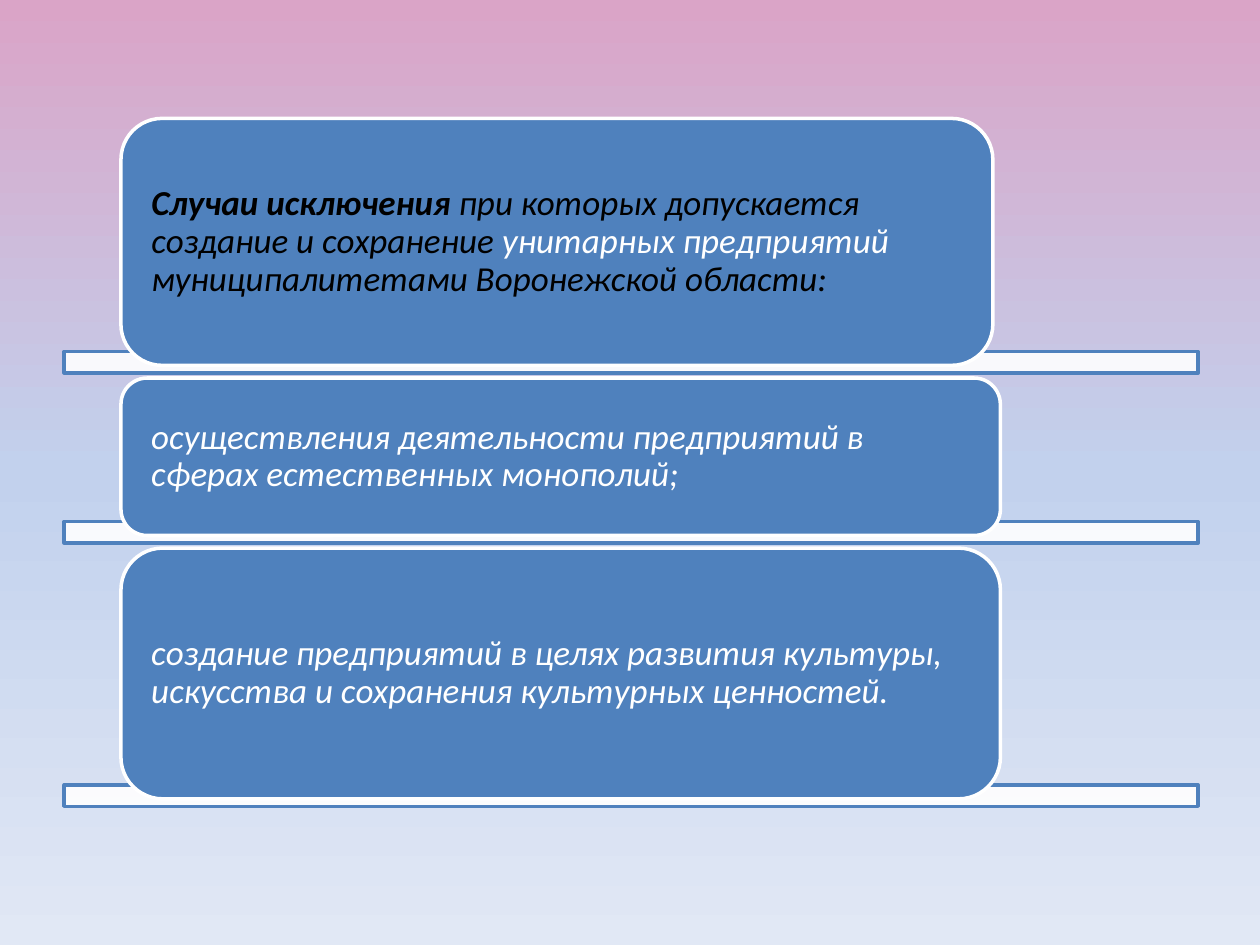
from copy import deepcopy

from lxml.etree import SubElement
from pptx import Presentation
from pptx.dml.color import RGBColor
from pptx.enum.shapes import MSO_SHAPE
from pptx.enum.text import MSO_ANCHOR, PP_ALIGN
from pptx.oxml.ns import qn
from pptx.util import Inches, Pt

THEME = {
    "font": "Calibri", "size": Pt(20), "line": Pt(2),
    "blue": "4F81BD", "white": "FFFFFF", "black": "000000",
    "background": [(0, "DAA4C7"), (0.5, "C2D1ED"), (1, "E1E8F5")],
}

deck = Presentation()
deck.slide_width, deck.slide_height = Inches(10), Inches(7.5)
page = deck.slides.add_slide(deck.slide_layouts[6])

# Grid: 100 columns by 75 rows
COLUMN = deck.slide_width / 100
ROW = deck.slide_height / 75
CORNER = 0.1667  # corner radius as a share of box height
CORNER_INSET = 0.29 * CORNER  # text inset that the rounded corner adds


def add_panel(kind, left, top, width, height, fill, line):
    panel = page.shapes.add_shape(kind, int(left * COLUMN), int(top * ROW),
                                  int(width * COLUMN), int(height * ROW))
    panel.shadow.inherit = False
    panel.fill.solid()
    panel.fill.fore_color.rgb = RGBColor.from_string(THEME[fill])
    panel.line.color.rgb = RGBColor.from_string(THEME[line])
    panel.line.width = THEME["line"]
    return panel


# Background: vertical gradient with three stops
backdrop = page.background.fill
backdrop.gradient()
backdrop.gradient_angle = 270
stop_list = page.element.find(".//" + qn("a:gsLst"))
stop_list.insert(1, deepcopy(stop_list[0]))
for stop, (position, color) in zip(backdrop.gradient_stops, THEME["background"]):
    stop.position = position
    stop.color.rgb = RGBColor.from_string(color)

# Boxes: width, height, and spans of (text, color, bold)
BOXES = [
    (69.2, 19.6, [
        ("Случаи исключения ", "black", True),
        ("при которых допускается создание и сохранение ", "black", False),
        ("унитарных предприятий ", "white", False),
        ("муниципалитетами Воронежской области:", "black", False),
    ]),
    (69.8, 12.5, [("осуществления деятельности предприятий в сферах "
                   "естественных монополий;", "white", False)]),
    (69.8, 19.9, [("создание предприятий в целях развития культуры, искусства "
                   "и сохранения культурных ценностей.", "white", False)]),
]
GAP = 1
top = 9.4

for width, height, spans in BOXES:
    # Translucent bar behind the lower edge of the box
    bar = add_panel(MSO_SHAPE.RECTANGLE, 5.1, top + height - 1.1, 90, 1.7, "white", "blue")
    bar_color = bar.fill._xPr.find(qn("a:solidFill"))[0]
    SubElement(bar_color, qn("a:alpha"), val="90000")

    # Rounded box with its text
    box = add_panel(MSO_SHAPE.ROUNDED_RECTANGLE, 9.6, top, width, height, "blue", "white")
    box.adjustments[0] = CORNER
    side = int(2.4 * COLUMN - CORNER_INSET * height * ROW)
    frame_format = {
        "word_wrap": True, "vertical_anchor": MSO_ANCHOR.MIDDLE,
        "margin_left": side, "margin_right": side, "margin_top": 0, "margin_bottom": 0,
    }
    for name, value in frame_format.items():
        setattr(box.text_frame, name, value)
    para = box.text_frame.paragraphs[0]
    para.alignment = PP_ALIGN.LEFT
    para.line_spacing = 0.9
    para.space_after = Pt(7)
    for text, color, bold in spans:
        span = para.add_run()
        span.text = text
        span_format = {"name": THEME["font"], "size": THEME["size"],
                       "bold": bold, "italic": True}
        for name, value in span_format.items():
            setattr(span.font, name, value)
        span.font.color.rgb = RGBColor.from_string(THEME[color])

    top += height + GAP

deck.save("out.pptx")
